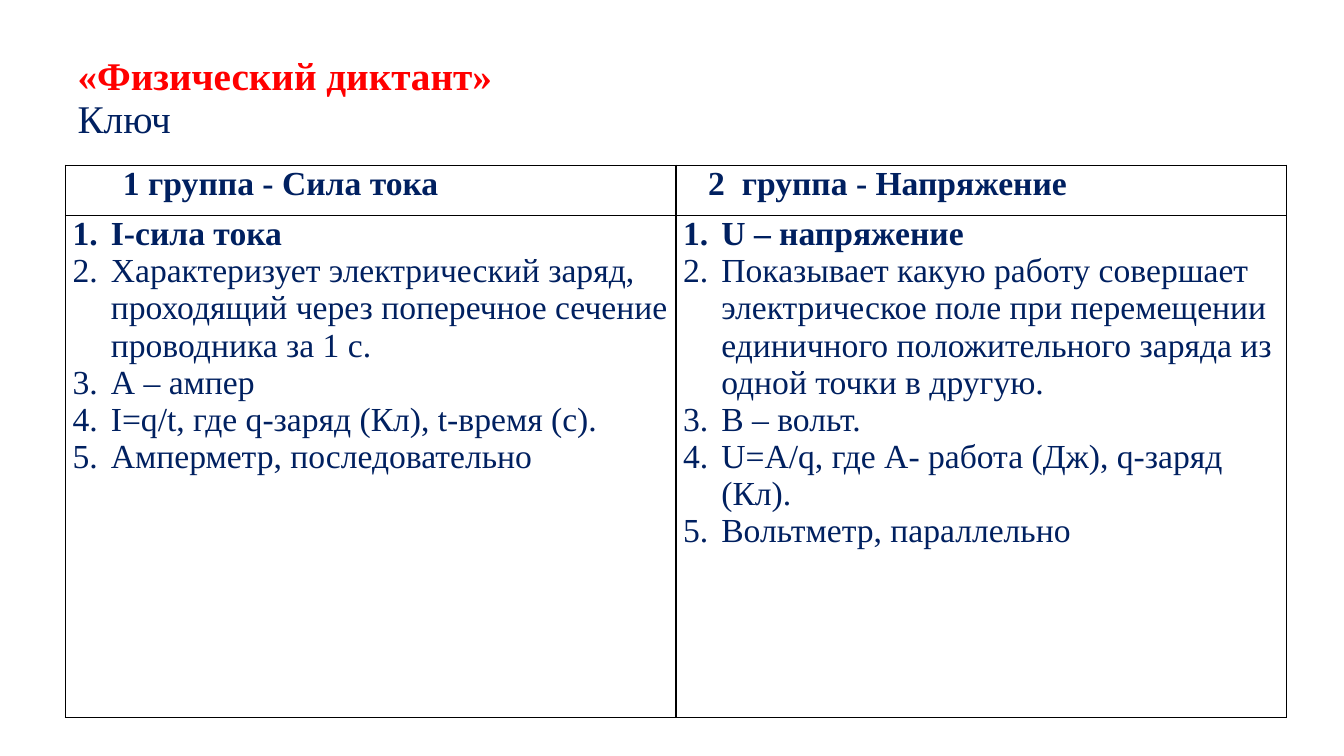
from pptx import Presentation
from pptx.dml.color import RGBColor
from pptx.enum import text
from pptx.oxml import parse_xml
from pptx.oxml.ns import nsdecls
from pptx.util import Inches, Pt

# Content
FONT, RED, NAVY, BLACK = "Times New Roman", "FF0000", "002060", "000000"
TITLE, SUBTITLE = "«Физический диктант»", "Ключ"
# Each group: heading, heading indent in inches, numbered answers
GROUPS = [
    ("1 группа - Сила тока", 0.5, [
        "I-сила тока",
        "Характеризует электрический заряд, проходящий через поперечное сечение "
        "проводника за 1 с.",
        "А – ампер",
        "I=q/t, где q-заряд (Кл), t-время (с).",
        "Амперметр, последовательно",
    ]),
    ("2  группа - Напряжение", 0.25, [
        "U – напряжение",
        "Показывает какую работу совершает электрическое поле при перемещении "
        "единичного положительного заряда из одной точки в другую.",
        "В – вольт.",
        "U=A/q, где А- работа (Дж), q-заряд (Кл).",
        "Вольтметр, параллельно",
    ]),
]

# Layout, in inches
LEFT, TITLE_TOP, TITLE_W, TITLE_H = 0.65, 0.55, 11.47, 1.01
KEY_TOP, KEY_W, KEY_ROWS = 1.64, 12.11, (0.5, 4.98)
KEY_MARGIN, TITLE_MARGIN, NUMBER_INDENT = 0.07, 0.12, 0.38


def add_text(tf, content, first=False, size=24, color=NAVY, bold=False,
             indent=0, numbered=False):
    p = tf.paragraphs[0] if first else tf.add_paragraph()
    p.alignment = text.PP_ALIGN.LEFT
    pPr = p._p.get_or_add_pPr()
    pPr.set("marL", str(Inches(indent)))
    pPr.set("indent", str(-Inches(indent) if numbered else 0))
    if numbered:
        pPr.append(parse_xml(f'<a:buFont {nsdecls("a")} typeface="+mj-lt"/>'))
        pPr.append(parse_xml(f'<a:buAutoNum {nsdecls("a")} type="arabicPeriod"/>'))
    r = p.add_run()
    r.text = content
    r.font.name, r.font.size, r.font.bold = FONT, Pt(size), bold
    r.font.color.rgb = RGBColor.from_string(color)


def format_cell(cell, margin, border):
    cell.margin_left = cell.margin_right = Inches(margin)
    cell.margin_top = cell.margin_bottom = 0
    tcPr = cell._tc.get_or_add_tcPr()
    line = (f'<a:solidFill><a:srgbClr val="{border}"/></a:solidFill>'
            if border else "<a:noFill/>")
    for side in ("lnL", "lnR", "lnT", "lnB"):
        tcPr.append(parse_xml(
            f'<a:{side} {nsdecls("a")} w="{Pt(1)}">{line}</a:{side}>'))
    cell.fill.background()


def add_plain_table(s, top, width, heights, columns, margin, border=None):
    table = s.shapes.add_table(
        len(heights), columns, Inches(LEFT), Inches(top),
        Inches(width), Inches(sum(heights))).table
    table.first_row = table.horz_banding = False
    for row, height in zip(table.rows, heights):
        row.height = Inches(height)
    for column in table.columns:
        column.width = Inches(width / columns)
    for cell in table.iter_cells():
        format_cell(cell, margin, border)
    return table


prs = Presentation()
prs.slide_width, prs.slide_height = Inches(13.33), Inches(7.5)
s = prs.slides.add_slide(prs.slide_layouts[6])

# Answer key
key = add_plain_table(s, KEY_TOP, KEY_W, KEY_ROWS, len(GROUPS), KEY_MARGIN, BLACK)
for col, (heading, indent, answers) in enumerate(GROUPS):
    add_text(key.cell(0, col).text_frame, heading, first=True, bold=True,
             indent=indent)
    for i, answer in enumerate(answers):
        add_text(key.cell(1, col).text_frame, answer, first=i == 0, bold=i == 0,
                 indent=NUMBER_INDENT, numbered=True)

# Heading in a borderless one-cell table
title = add_plain_table(s, TITLE_TOP, TITLE_W, (TITLE_H,), 1, TITLE_MARGIN)
tf = title.cell(0, 0).text_frame
add_text(tf, TITLE, first=True, size=28, color=RED, bold=True)
add_text(tf, SUBTITLE, size=28)

prs.save("out.pptx")
